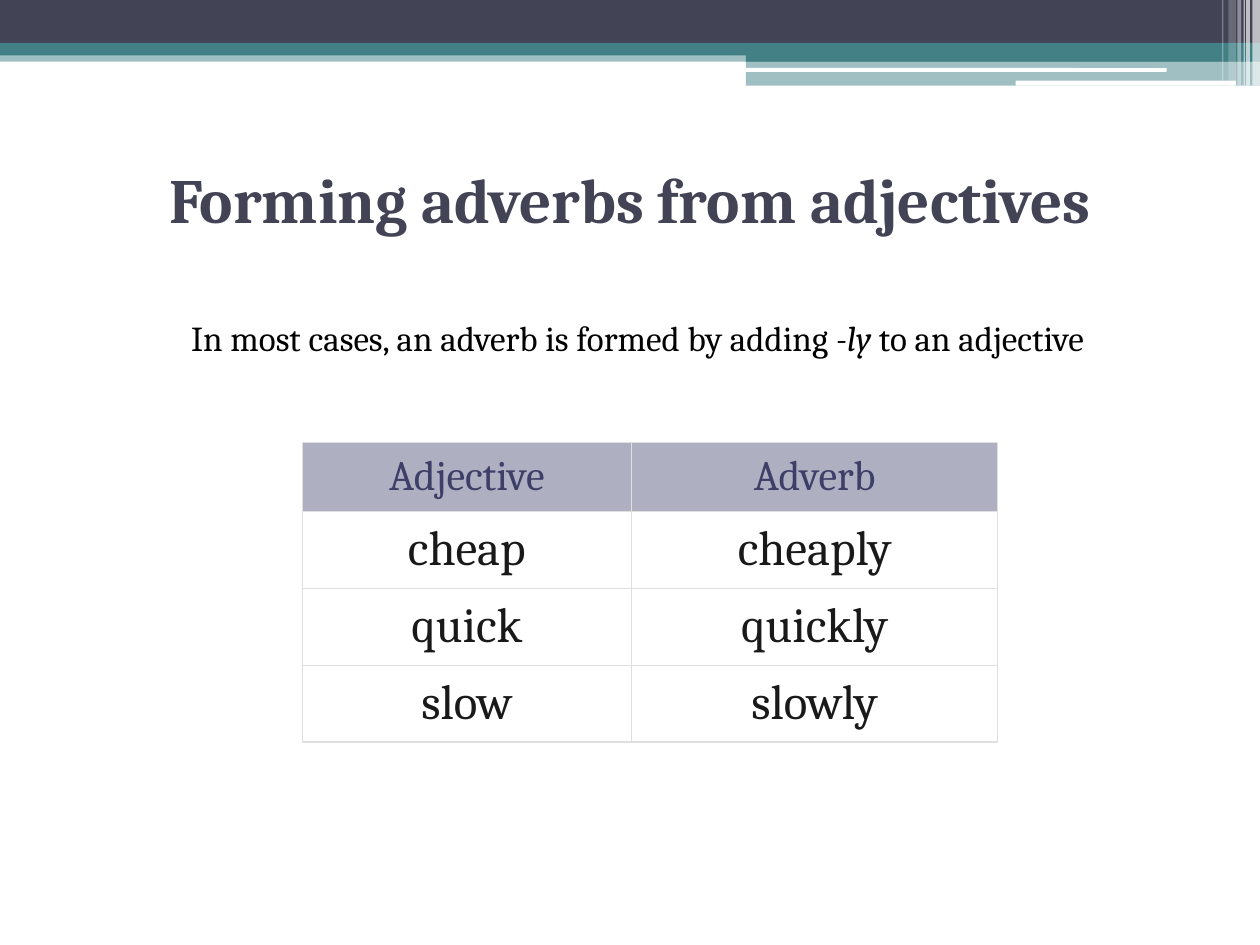
"""Build a slide on forming adverbs from adjectives."""
from lxml.etree import SubElement
from pptx import Presentation
from pptx.dml.color import RGBColor
from pptx.enum.shapes import MSO_SHAPE
from pptx.enum.text import MSO_ANCHOR, MSO_AUTO_SIZE, PP_ALIGN
from pptx.oxml.ns import qn
from pptx.util import Inches, Pt

FONT = "Cambria"
HEX = {"navy": "424456", "teal": "438086", "white": "FFFFFF", "black": "000000",
       "head": "AEB0C1", "label": "3E3F68", "word": "191919", "rule": "DFDFDF"}
TITLE = "Forming adverbs from adjectives"
LEAD = [("In most cases, an adverb is formed by adding ", False),
        ("-ly", True), (" to an adjective", False)]
ROWS = [("Adjective", "Adverb"), ("cheap", "cheaply"),
        ("quick", "quickly"), ("slow", "slowly")]
COLS = (2.61, 2.91)
HEAD_H, ROW_H = 0.55, 0.61
BANDS = [
    (0, 0.4, 10, 0.09, "teal", 50),
    (0, 0, 10, 0.34, "navy", 100),
    (0, 0.34, 10, 0.1, "teal", 100),
    (5.92, 0.39, 4.08, 0.1, "teal", 100),
    (5.92, 0.48, 4.08, 0.2, "teal", 50),
]
PILLS = [(5.91, 0.54, 3.35, 0.03, "white", 100),
         (8.06, 0.64, 1.75, 0.04, "white", 100)]
STRIPES = [(9.94, 0.06, 0.68, 65), (9.89, 0.03, 0.68, 65), (9.87, 0.01, 0.68, 60),
           (9.82, 0.03, 0.68, 40), (9.75, 0.06, 0.64, 20), (9.7, 0.01, 0.64, 30)]


def color(name):
    return RGBColor.from_string(HEX[name])


def add_bar(slide, kind, x, y, w, h, name, alpha):
    bar = slide.shapes.add_shape(kind, *map(Inches, (x, y, w, h)))
    bar.shadow.inherit = False
    bar.line.fill.background()
    bar.fill.solid()
    bar.fill.fore_color.rgb = color(name)
    if alpha < 100:
        tone = bar.fill._xPr.find(".//" + qn("a:srgbClr"))
        SubElement(tone, qn("a:alpha"), val=str(alpha * 1000))


def style(para, size, name, bold=False):
    para.alignment = PP_ALIGN.CENTER
    font = para.font
    font.name, font.size, font.bold = FONT, Pt(size), bold
    font.color.rgb = color(name)


def place(shape, x, y, w, h):
    shape.left, shape.top, shape.width, shape.height = map(Inches, (x, y, w, h))
    frame = shape.text_frame
    frame.auto_size = MSO_AUTO_SIZE.NONE
    frame.vertical_anchor = MSO_ANCHOR.TOP
    return frame


def add_text(slide):
    frame = place(slide.shapes.title, 0.5, 1.25, 9, 1.17)
    frame.margin_top = Inches(0.02)
    frame.text = TITLE
    style(frame.paragraphs[0], 36, "navy", True)

    para = place(slide.placeholders[1], 0.5, 2.46, 9, 4.73).paragraphs[0]
    for text, slant in LEAD:
        run = para.add_run()
        run.text, run.font.italic = text, slant
    style(para, 20, "black")
    para.space_before = Pt(3)
    props = para._p.get_or_add_pPr()
    props.set("marL", str(Inches(0.12)))
    props.set("indent", "0")
    SubElement(props, qn("a:buNone"))
    props.append(props.find(qn("a:defRPr")))


def add_rules(cell):
    props = cell._tc.get_or_add_tcPr()
    for side in "LRTB":
        line = SubElement(props, qn("a:ln" + side), w=str(Pt(0.75)))
        fill = SubElement(line, qn("a:solidFill"))
        SubElement(fill, qn("a:srgbClr"), val=HEX["rule"])


def add_words(slide):
    high = HEAD_H + ROW_H * (len(ROWS) - 1)
    table = slide.shapes.add_table(len(ROWS), len(COLS), Inches(2.4), Inches(3.51),
                                   Inches(sum(COLS)), Inches(high)).table
    for col, wide in zip(table.columns, COLS):
        col.width = Inches(wide)
    for r, words in enumerate(ROWS):
        table.rows[r].height = Inches(ROW_H if r else HEAD_H)
        size, ink, back = (28, "word", "white") if r else (24, "label", "head")
        for c, word in enumerate(words):
            cell = table.cell(r, c)
            cell.text = word
            cell.margin_left = cell.margin_right = Inches(0.08)
            cell.margin_top = cell.margin_bottom = Inches(0.08)
            style(cell.text_frame.paragraphs[0], size, ink)
            add_rules(cell)
            cell.fill.solid()
            cell.fill.fore_color.rgb = color(back)


def main():
    deck = Presentation()
    deck.slide_width, deck.slide_height = Inches(10), Inches(7.5)
    slide = deck.slides.add_slide(deck.slide_layouts[1])
    for band in BANDS:
        add_bar(slide, MSO_SHAPE.RECTANGLE, *band)
    for pill in PILLS:
        add_bar(slide, MSO_SHAPE.ROUNDED_RECTANGLE, *pill)
    for x, w, h, alpha in STRIPES:
        add_bar(slide, MSO_SHAPE.RECTANGLE, x, 0, w, h, "white", alpha)
    add_text(slide)
    add_words(slide)
    deck.save("out.pptx")


if __name__ == "__main__":
    main()
